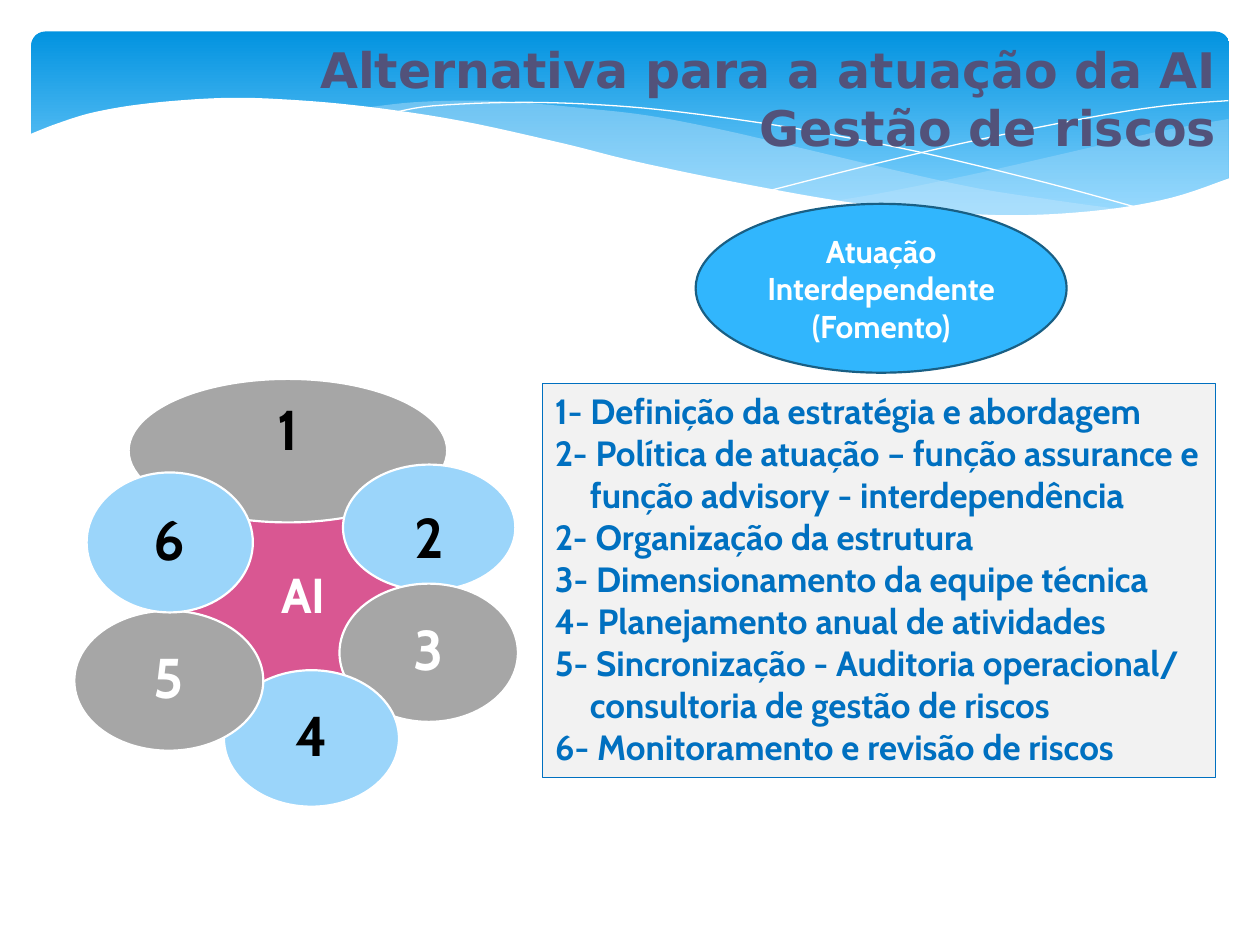
from lxml import etree
from pptx import Presentation
from pptx import util as u
from pptx.dml import color as dml
from pptx.enum import shapes, text
from pptx.oxml import ns

COLORS = {
    "white": "FFFFFF", "black": "000000", "sky_top": "0293E0", "sky_end": "83D3FE",
    "mist": "C6E7FC", "title": "52527A", "oval": "31B6FD", "oval_edge": "195F84",
    "hub": "D95792", "gray": "A6A6A6", "light": "9BD5FA", "panel": "F2F2F2", "blue": "0070C0",
}
RIGHT_MIST = [
    [(684, 50), (645, 57), (602, 67), (543, 80.5), (490, 91.5), (458, 97)],
    [(458, 97), (500, 102), (536, 105), (575, 106), (610, 103.5), (639, 98.5),
     (665, 91.5), (684, 83.5)],
]
WIDE_MIST = [
    [(625, 102), (585, 96.5), (540, 89.5), (490, 78.5), (435, 65.5), (391.5, 55.5),
     (352, 48), (317, 44), (284.5, 41), (255.5, 39.5), (218, 40.5), (188, 44)],
    [(188, 44), (228, 49.5), (273, 58.5), (305, 65.5), (363.5, 79), (414.5, 90),
     (461, 98), (502, 103), (547, 106), (578, 106.5), (606, 104.5), (625, 102)],
]
LONG_STREAK = [[(204.5, 47), (229.5, 42.5), (281.5, 40.5), (334, 42.5), (382.5, 47.5),
                (440, 56), (505.5, 68.5), (580, 86.5), (635, 101.5)]]
SHORT_STREAK = [[(423.5, 90.5), (482.5, 75.5), (540.5, 62), (605.5, 49),
                 (647.5, 42.5), (684, 39.5)]]
WHITE_WAVE = [
    [(685.5, 83.5), (651.5, 95), (612, 102), (564.5, 105), (517.5, 103), (463, 97),
     (399, 85.5), (344, 74), (304, 64), (245, 51), (192, 43), (147.5, 39), (109.5, 38),
     (67.5, 41), (36.5, 46), (15, 52.5), (-1.5, 59)],
    [(-1.5, 143), (685.5, 143)],
]
TITLE = ["Alternativa para a atuação da AI", "Gestão de riscos"]
ROLE = ["Atuação", "Interdependente", "(Fomento)"]
STEPS = [
    "1- Definição da estratégia e abordagem",
    "2- Política de atuação – função assurance e\vfunção advisory - interdependência",
    "2- Organização da estrutura",
    "3- Dimensionamento da equipe técnica",
    "4- Planejamento anual de atividades",
    "5- Sincronização - Auditoria operacional/\vconsultoria de gestão de riscos",
    "6- Monitoramento e revisão de riscos",
]
PETALS = [
    ("AI", (56.5, 68.5, 148.5, 113), "hub", "white", "MIDDLE"),
    ("1", (31, 0, 182, 82), "gray", "black", "TOP"),
    ("2", (153.5, 49, 98.5, 72), "light", "black", "BOTTOM"),
    ("3", (151.5, 117, 102, 79), "gray", "white", "MIDDLE"),
    ("4", (85.5, 166.5, 100, 78), "light", "black", "MIDDLE"),
    ("5", (0, 132.5, 108, 80), "gray", "white", "MIDDLE"),
    ("6", (7, 53.5, 95, 80), "light", "black", "MIDDLE"),
]


def rgb(name):
    """Return the named colour."""
    return dml.RGBColor.from_string(COLORS[name])


def apply(target, values):
    """Set every attribute in values on target."""
    for key, value in values.items():
        setattr(target, key, value)


def paint(shape, fill=None, line=None, width=0, opacity=100):
    """Set fill, outline and opacity of a shape, without a shadow."""
    shape.shadow.inherit = False
    if fill:
        shape.fill.solid()
        shape.fill.fore_color.rgb = rgb(fill)
        if opacity < 100:
            tint = shape.element.spPr.find(ns.qn("a:solidFill"))[0]
            etree.SubElement(tint, ns.qn("a:alpha"), val=str(opacity * 1000))
    else:
        shape.fill.background()
    if line:
        shape.line.color.rgb = rgb(line)
        shape.line.width = u.Pt(width)
    else:
        shape.line.fill.background()


def add_preset(slide, kind, box):
    """Add a preset shape in a box given in points."""
    return slide.shapes.add_shape(kind, *map(u.Pt, box))


def write(shape, lines, font, size, color, align="CENTER", anchor="MIDDLE", **frame):
    """Write one bold paragraph per line."""
    apply(shape.text_frame, {"text": "\n".join(lines), "word_wrap": True,
                             "vertical_anchor": text.MSO_ANCHOR[anchor], **frame})
    for paragraph in shape.text_frame.paragraphs:
        paragraph.alignment = text.PP_ALIGN[align]
        for run in paragraph.runs:
            apply(run.font, {"name": font, "size": u.Pt(size), "bold": True})
            run.font.color.rgb = rgb(color)


def smooth_curve(knots, steps=6):
    """Return points of a Catmull-Rom curve through the knots."""
    if len(knots) < 3:
        return knots
    padded = [knots[0], *knots, knots[-1]]
    points = [knots[0]]
    for a, b, c, d in zip(padded, padded[1:], padded[2:], padded[3:]):
        for t in (step / steps for step in range(1, steps + 1)):
            points.append(tuple(
                (2 * q + (r - p) * t + (2 * p - 5 * q + 4 * r - s) * t ** 2
                 + (3 * q - p - 3 * r + s) * t ** 3) / 2
                for p, q, r, s in zip(a, b, c, d)))
    return points


def add_wave(slide, box, edges, closed=True, **look):
    """Draw a curved outline made of edges relative to the box."""
    points = [(u.Pt(box[0] + x), u.Pt(box[1] + y))
              for edge in edges for x, y in smooth_curve(edge)]
    builder = slide.shapes.build_freeform(*points[0])
    builder.add_line_segments(points[1:], close=closed)
    paint(builder.convert_to_shape(), **look)


def add_header(slide, box):
    """Draw the blue band and its waves."""
    band = add_preset(slide, shapes.MSO_SHAPE.ROUNDED_RECTANGLE, box)
    band.adjustments[0] = 0.07
    paint(band)
    band.fill.gradient()
    band.fill.gradient_angle = 270
    for stop, (place, name) in zip(band.fill.gradient_stops, [(0, "sky_top"), (0.9, "sky_end")]):
        stop.position = place
        stop.color.rgb = rgb(name)
    add_wave(slide, box, RIGHT_MIST, fill="mist", opacity=29)
    add_wave(slide, box, WIDE_MIST, fill="mist", opacity=40)
    for streak in (LONG_STREAK, SHORT_STREAK):
        add_wave(slide, box, streak, closed=False, line="white")
    add_wave(slide, box, WHITE_WAVE, fill="white")


def add_title(slide, box):
    """Place the title over the header."""
    title = slide.shapes.title
    apply(title, dict(zip(("left", "top", "width", "height"), map(u.Pt, box))))
    title.element.getparent().append(title.element)
    write(title, TITLE, "DejaVu Sans", 28, "title", "RIGHT", auto_size=text.MSO_AUTO_SIZE.NONE)


def add_role(slide, box):
    """Draw the oval that names the role."""
    oval = add_preset(slide, shapes.MSO_SHAPE.OVAL, box)
    paint(oval, "oval", "oval_edge", 1.25)
    write(oval, ROLE, "Cabin", 18, "white")


def add_flower(slide, box):
    """Draw the hub and the six numbered petals around it."""
    margins = dict.fromkeys(("margin_left", "margin_top", "margin_right", "margin_bottom"), u.Pt(1))
    for label, (x, y, width, height), fill, ink, anchor in PETALS:
        petal = add_preset(slide, shapes.MSO_SHAPE.OVAL, (box[0] + x, box[1] + y, width, height))
        paint(petal, fill, "white", 1.25)
        write(petal, [label], "Cabin", 28 if label == "AI" else 32, ink, anchor=anchor, **margins)
        petal.text_frame.paragraphs[0].line_spacing = 0.9


def add_steps(slide, box):
    """Draw the panel that lists the steps."""
    panel = add_preset(slide, shapes.MSO_SHAPE.RECTANGLE, box)
    paint(panel, "panel", "blue", 0.75)
    write(panel, STEPS, "Cabin", 20, "blue", "LEFT", "TOP", word_wrap=False)
    for paragraph in panel.text_frame.paragraphs:
        hang = u.Pt(20)
        properties = paragraph._p.get_or_add_pPr()
        properties.set("marL", str(hang))
        properties.set("indent", str(-hang))


def main():
    """Build the slide and save it."""
    deck = Presentation()
    apply(deck, {"slide_width": u.Pt(720), "slide_height": u.Pt(540)})
    slide = deck.slides.add_slide(deck.slide_layouts[5])
    add_header(slide, (18, 18, 684.5, 112.5))
    add_title(slide, (144, 11, 558, 90))
    add_role(slide, (397.5, 116.5, 212, 96.5))
    add_flower(slide, (42.5, 216.5, 254, 245))
    add_steps(slide, (310, 219, 384.5, 225.5))
    deck.save("out.pptx")


if __name__ == "__main__":
    main()
